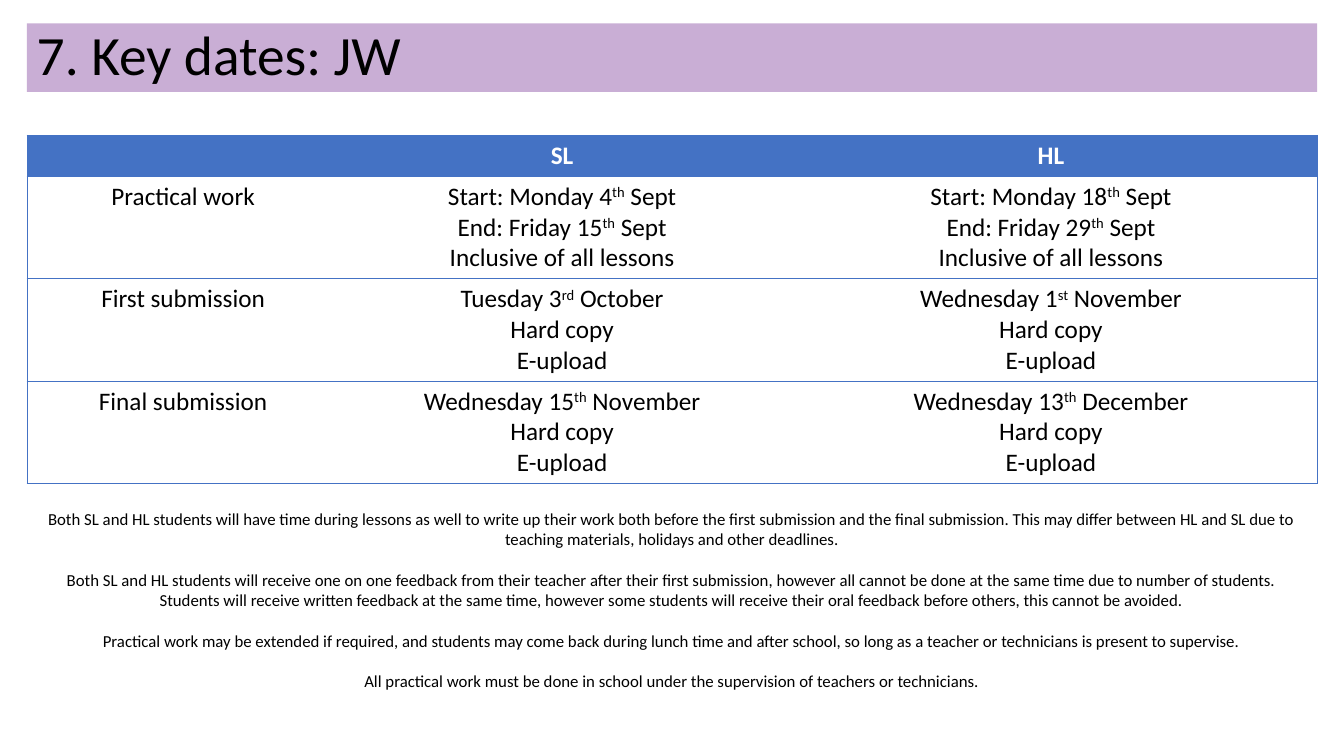
import pptx
import pptx.dml.color
import pptx.enum.text
import pptx.oxml.ns
import pptx.util
from lxml import etree

Pt = pptx.util.Pt
Align = pptx.enum.text.PP_ALIGN
Anchor = pptx.enum.text.MSO_ANCHOR

LEFT, WIDTH = 19.2, 921.6
BLUE = "4472C4"

HEADINGS = ["", "SL", "HL"]
# Text between carets is superscript.
DATES = [
    ["Practical work",
     "Start: Monday 4^th^ Sept\nEnd: Friday 15^th^ Sept\nInclusive of all lessons",
     "Start: Monday 18^th^ Sept\nEnd: Friday 29^th^ Sept\nInclusive of all lessons"],
    ["First submission",
     "Tuesday 3^rd^ October\nHard copy\nE-upload",
     "Wednesday 1^st^ November\nHard copy\nE-upload"],
    ["Final submission",
     "Wednesday 15^th^ November\nHard copy\nE-upload",
     "Wednesday 13^th^ December\nHard copy\nE-upload"],
]
NOTES = "\n".join([
    "Both SL and HL students will have time during lessons as well to write up their work "
    "both before the first submission and the final submission. This may differ between HL "
    "and SL due to teaching materials, holidays and other deadlines.",
    "Both SL and HL students will receive one on one feedback from their teacher after their "
    "first submission, however all cannot be done at the same time due to number of students. "
    "Students will receive written feedback at the same time, however some students will "
    "receive their oral feedback before others, this cannot be avoided.",
    "Practical work may be extended if required, and students may come back during lunch time "
    "and after school, so long as a teacher or technicians is present to supervise.",
    "All practical work must be done in school under the supervision of teachers or technicians.",
])


def color(value):
    return pptx.dml.color.RGBColor.from_string(value)


def assign(target, values):
    for name, value in values.items():
        setattr(target, name, value)


class PageBuilder:
    def __init__(self, page, font="Calibri"):
        self.page = page
        self.font = font

    def fill_frame(self, frame, text, size, ink="000000", bold=False, **layout):
        """Fill a text frame, one paragraph per line; layout holds paragraph formats."""
        for index, line in enumerate(text.split("\n")):
            para = frame.add_paragraph() if index else frame.paragraphs[0]
            assign(para, layout)
            if index == 0:
                para.space_before = Pt(0)
            for part, words in enumerate(line.split("^")):
                span = para.add_run()
                span.text = words
                assign(span.font, {"name": self.font, "size": Pt(size), "bold": bold})
                span.font.color.rgb = color(ink)
                if part % 2:
                    span.font._element.set("baseline", "30000")

    def text(self, top, height, text, size, fill=None, anchor=Anchor.TOP, **layout):
        box = self.page.shapes.add_textbox(Pt(LEFT), Pt(top), Pt(WIDTH), Pt(height))
        assign(box.text_frame, {"word_wrap": True, "vertical_anchor": anchor})
        if fill:
            box.fill.solid()
            box.fill.fore_color.rgb = color(fill)
        self.fill_frame(box.text_frame, text, size, **layout)

    def border(self, cell, side, ink):
        """Draw one cell side (L, R, T or B), or clear it when ink is None."""
        properties = cell._tc.get_or_add_tcPr()
        qn = pptx.oxml.ns.qn
        line = etree.SubElement(properties, qn("a:ln" + side), w=str(Pt(0.5)))
        if ink:
            solid = etree.SubElement(line, qn("a:solidFill"))
            etree.SubElement(solid, qn("a:srgbClr"), val=ink)
        else:
            etree.SubElement(line, qn("a:noFill"))

    def table(self, top, rows, widths, heights, size):
        frame = self.page.shapes.add_table(
            len(rows), len(widths), Pt(LEFT), Pt(top), Pt(sum(widths)), Pt(sum(heights)))
        grid = frame.table
        grid.horz_banding = False
        for column, width in zip(grid.columns, widths):
            column.width = Pt(width)
        for row_index, (row, height) in enumerate(zip(rows, heights)):
            grid.rows[row_index].height = Pt(height)
            header = row_index == 0
            for column_index, words in enumerate(row):
                cell = grid.cell(row_index, column_index)
                self.border(cell, "L", BLUE if column_index == 0 else None)
                self.border(cell, "R", BLUE if column_index == len(row) - 1 else None)
                self.border(cell, "T", BLUE)
                self.border(cell, "B", BLUE)
                if header:
                    cell.fill.solid()
                    cell.fill.fore_color.rgb = color(BLUE)
                else:
                    cell.fill.background()
                self.fill_frame(cell.text_frame, words, size, bold=header,
                                ink="FFFFFF" if header else "000000", alignment=Align.CENTER)


def main():
    deck = pptx.Presentation()
    assign(deck, {"slide_width": Pt(960), "slide_height": Pt(540)})
    builder = PageBuilder(deck.slides.add_slide(deck.slide_layouts[6]))
    builder.text(16.6, 49, "7. Key dates: JW", 39.6, fill="C9AED5",
                 anchor=Anchor.MIDDLE, line_spacing=0.9)
    builder.table(96.5, [HEADINGS] + DATES, widths=[223.2, 318.2, 380.2],
                  heights=[29.4] + [73.2] * len(DATES), size=18)
    builder.text(360, 138.2, NOTES, 12, alignment=Align.CENTER, space_before=Pt(14.6))
    deck.save("out.pptx")


if __name__ == "__main__":
    main()
